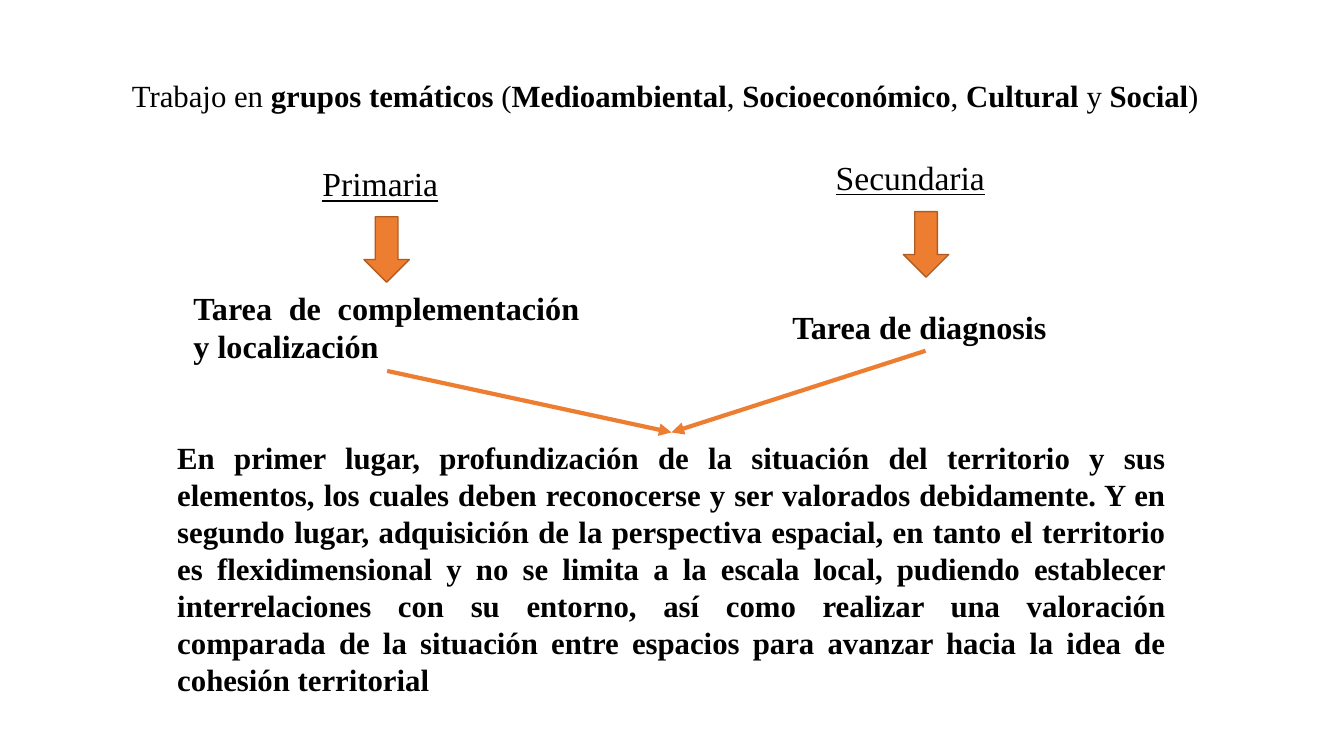
from lxml import etree
from pptx import Presentation
from pptx.dml.color import RGBColor
from pptx.enum.shapes import MSO_CONNECTOR, MSO_SHAPE
from pptx.enum.text import MSO_ANCHOR, PP_ALIGN
from pptx.oxml.ns import qn
from pptx.util import Inches, Pt

DOWN_ARROW = MSO_SHAPE.DOWN_ARROW
STRAIGHT = MSO_CONNECTOR.STRAIGHT
TOP, MIDDLE = MSO_ANCHOR.TOP, MSO_ANCHOR.MIDDLE
JUSTIFY = PP_ALIGN.JUSTIFY

FONT = "Times New Roman"
COLORS = {"text": "000000", "arrow": "ED7D31", "arrow_edge": "AF5C24"}

prs = Presentation()
prs.slide_width, prs.slide_height = Inches(13.33), Inches(7.5)
slide = prs.slides.add_slide(prs.slide_layouts[6])


def color(name):
    return RGBColor.from_string(COLORS[name])


def add_text(place, size, runs, anchor=TOP, underline=False):
    """Add a justified text box; runs are (text, bold) pairs."""
    frame = slide.shapes.add_textbox(*map(Inches, place)).text_frame
    frame.word_wrap = True
    frame.vertical_anchor = anchor
    paragraph = frame.paragraphs[0]
    paragraph.alignment = JUSTIFY
    for text, bold in runs:
        run = paragraph.add_run()
        run.text = text
        run.font.name = FONT
        run.font.size = Pt(size)
        run.font.bold = bold
        run.font.underline = underline
        run.font.color.rgb = color("text")


# Heading: thematic groups in bold
heading = [
    ("Trabajo en ", False), ("grupos temáticos", True), (" (", False),
    ("Medioambiental", True), (", ", False), ("Socioeconómico", True),
    (", ", False), ("Cultural", True), (" y ", False), ("Social", True),
    (")", False),
]
add_text((1.21, 0.71, 10.91, 0.47), 22, heading)

# Two stages: label, block arrow, task, and line to the shared outcome
stages = [
    ("Primaria", (3.1, 1.57, 1.47, 0.51), (3.61, 2.15),
     "Tarea de complementación y localización", (1.82, 2.8, 4.03, 0.88),
     (3.84, 3.68)),
    ("Secundaria", (8.19, 1.51, 1.98, 0.51), (8.96, 2.1),
     "Tarea de diagnosis", (7.76, 3, 2.85, 0.49), (9.18, 3.48)),
]
outcome_top = (6.66, 4.29)

for label, label_place, arrow_corner, task, task_place, line_start in stages:
    add_text(label_place, 24, [(label, False)], underline=True)

    arrow = slide.shapes.add_shape(
        DOWN_ARROW, *map(Inches, arrow_corner), Inches(0.45), Inches(0.65))
    arrow.shadow.inherit = False
    arrow.fill.solid()
    arrow.fill.fore_color.rgb = color("arrow")
    arrow.line.color.rgb = color("arrow_edge")
    arrow.line.width = Pt(1)

    add_text(task_place, 23, [(task, True)], MIDDLE)

    link = slide.shapes.add_connector(
        STRAIGHT, *map(Inches, line_start + outcome_top))
    link.line.color.rgb = color("arrow")
    link.line.width = Pt(3)
    etree.SubElement(link.line._get_or_add_ln(), qn("a:tailEnd"), type="triangle")
    etree.SubElement(link._element.spPr, qn("a:effectLst"))

# Shared outcome
outcome = (
    "En primer lugar, profundización de la situación del territorio y sus "
    "elementos, los cuales deben reconocerse y ser valorados debidamente. Y en "
    "segundo lugar, adquisición de la perspectiva espacial, en tanto el territorio "
    "es flexidimensional y no se limita a la escala local, pudiendo establecer "
    "interrelaciones con su entorno, así como realizar una valoración comparada "
    "de la situación entre espacios para avanzar hacia la idea de cohesión "
    "territorial"
)
add_text((1.66, 4.29, 10, 2.69), 22, [(outcome, True)], MIDDLE)

prs.save("out.pptx")
